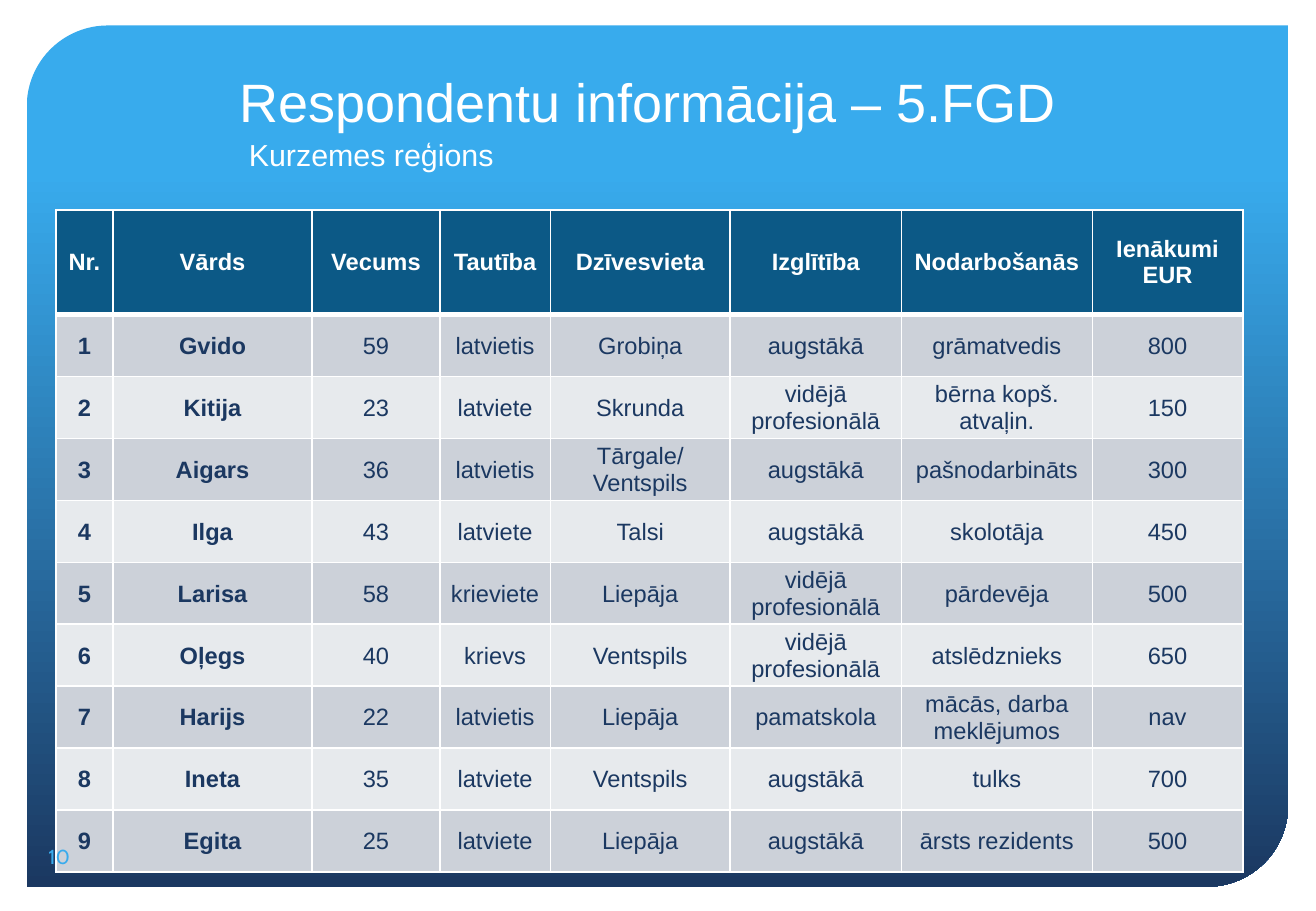
"""Build the slide listing the respondents of the fifth focus group."""
from lxml.etree import SubElement
from pptx import Presentation
from pptx.dml.color import RGBColor
from pptx.enum.shapes import MSO_SHAPE as Shape
from pptx.enum.text import MSO_ANCHOR as Anchor, PP_ALIGN as Align
from pptx.oxml.ns import qn
from pptx.util import Inches, Pt

COLORS = {
    "white": "FFFFFF",
    "sky": "38ABED",
    "navy": "1B3861",
    "header": "0C5986",
    "odd": "CCD1D9",
    "even": "E7EAED",
}
COLUMN_WIDTHS = [0.47, 1.64, 1.05, 0.91, 1.48, 1.41, 1.57, 1.24]
HEADER_HEIGHT, ROW_HEIGHT = 0.86, 0.51
HEADINGS = ["Nr.", "Vārds", "Vecums", "Tautība", "Dzīvesvieta", "Izglītība",
            "Nodarbošanās", "Ienākumi EUR"]
RESPONDENTS = [
    ["1", "Gvido", "59", "latvietis", "Grobiņa", "augstākā", "grāmatvedis", "800"],
    ["2", "Kitija", "23", "latviete", "Skrunda", "vidējā profesionālā", "bērna kopš. atvaļin.", "150"],
    ["3", "Aigars", "36", "latvietis", "Tārgale/Ventspils", "augstākā", "pašnodarbināts", "300"],
    ["4", "Ilga", "43", "latviete", "Talsi", "augstākā", "skolotāja", "450"],
    ["5", "Larisa", "58", "krieviete", "Liepāja", "vidējā profesionālā", "pārdevēja", "500"],
    ["6", "Oļegs", "40", "krievs", "Ventspils", "vidējā profesionālā", "atslēdznieks", "650"],
    ["7", "Harijs", "22", "latvietis", "Liepāja", "pamatskola", "mācās, darba meklējumos", "nav"],
    ["8", "Ineta", "35", "latviete", "Ventspils", "augstākā", "tulks", "700"],
    ["9", "Egita", "25", "latviete", "Liepāja", "augstākā", "ārsts rezidents", "500"],
]


class SlideBuilder:
    def __init__(self, slide, font="Arial"):
        self.slide = slide
        self.font = font

    def color(self, name):
        return RGBColor.from_string(COLORS[name])

    def set_text(self, frame, text, size, color, bold=False, align=Align.LEFT, font=None):
        frame.text = text
        paragraph = frame.paragraphs[0]
        paragraph.alignment = align
        style = paragraph.runs[0].font
        style.name = font or self.font
        style.size = Pt(size)
        style.bold = bold
        style.color.rgb = self.color(color)

    def backdrop(self, left, top, width, height):
        panel = self.slide.shapes.add_shape(
            Shape.ROUND_2_DIAG_RECTANGLE,
            Inches(left), Inches(top), Inches(width), Inches(height))
        panel.adjustments[0] = 0.094
        panel.adjustments[1] = 0
        panel.shadow.inherit = False
        panel.line.fill.background()
        panel.fill.gradient()
        panel.fill.gradient_angle = 270
        stops = zip(panel.fill.gradient_stops, ("sky", "navy"), (0.17, 1))
        for stop, name, position in stops:
            stop.color.rgb = self.color(name)
            stop.position = position
        self.slide.shapes._spTree.insert(2, panel._element)

    def title(self, text, left, top, width, height):
        heading = self.slide.shapes.title
        heading.left, heading.top = Inches(left), Inches(top)
        heading.width, heading.height = Inches(width), Inches(height)
        heading.text_frame.vertical_anchor = Anchor.BOTTOM
        self.set_text(heading.text_frame, text, 32, "white")

    def label(self, text, left, top, width, height, size, color, wrap=True, font=None):
        box = self.slide.shapes.add_textbox(
            Inches(left), Inches(top), Inches(width), Inches(height))
        box.text_frame.word_wrap = wrap
        self.set_text(box.text_frame, text, size, color, font=font)

    def borders(self, cell, top, bottom):
        properties = cell._tc.get_or_add_tcPr()
        widths = {"a:lnL": 1, "a:lnR": 1, "a:lnT": top, "a:lnB": bottom}
        for side, width in widths.items():
            line = SubElement(properties, qn(side), w=str(Pt(width)))
            fill = SubElement(line, qn("a:solidFill"))
            SubElement(fill, qn("a:srgbClr"), val=COLORS["white"])

    def cell(self, cell, text, row, column):
        is_header = row == 0
        self.borders(cell, 3 if row == 1 else 1, 3 if is_header else 1)
        cell.fill.solid()
        band = "header" if is_header else "odd" if row % 2 else "even"
        cell.fill.fore_color.rgb = self.color(band)
        cell.vertical_anchor = Anchor.MIDDLE
        if not is_header:
            cell.margin_left = cell.margin_top = cell.margin_right = Inches(0.01)
            cell.margin_bottom = 0
        self.set_text(cell.text_frame, text, 14, "white" if is_header else "navy",
                      bold=is_header or column < 2, align=Align.CENTER)

    def table(self, rows, left, top):
        height = HEADER_HEIGHT + ROW_HEIGHT * (len(rows) - 1)
        grid = self.slide.shapes.add_table(
            len(rows), len(COLUMN_WIDTHS), Inches(left), Inches(top),
            Inches(sum(COLUMN_WIDTHS)), Inches(height)).table
        for column, width in zip(grid.columns, COLUMN_WIDTHS):
            column.width = Inches(width)
        for r, texts in enumerate(rows):
            grid.rows[r].height = Inches(ROW_HEIGHT if r else HEADER_HEIGHT)
            for c, text in enumerate(texts):
                self.cell(grid.cell(r, c), text, r, c)


def main():
    deck = Presentation()
    deck.slide_width, deck.slide_height = Inches(10.83), Inches(7.5)
    builder = SlideBuilder(deck.slides.add_slide(deck.slide_layouts[5]))
    builder.backdrop(0.22, 0.21, 10.38, 7.09)
    builder.title("Respondentu informācija – 5.FGD", 1.87, 0.36, 7.48, 0.79)
    builder.table([HEADINGS] + RESPONDENTS, 0.46, 1.73)
    builder.label("Kurzemes reģions", 1.95, 1.07, 2.24, 0.4, 18, "white", wrap=False)
    builder.label("10", 0.3, 6.9, 0.58, 0.4, 12, "sky", font="Cabin")
    deck.save("out.pptx")


if __name__ == "__main__":
    main()
